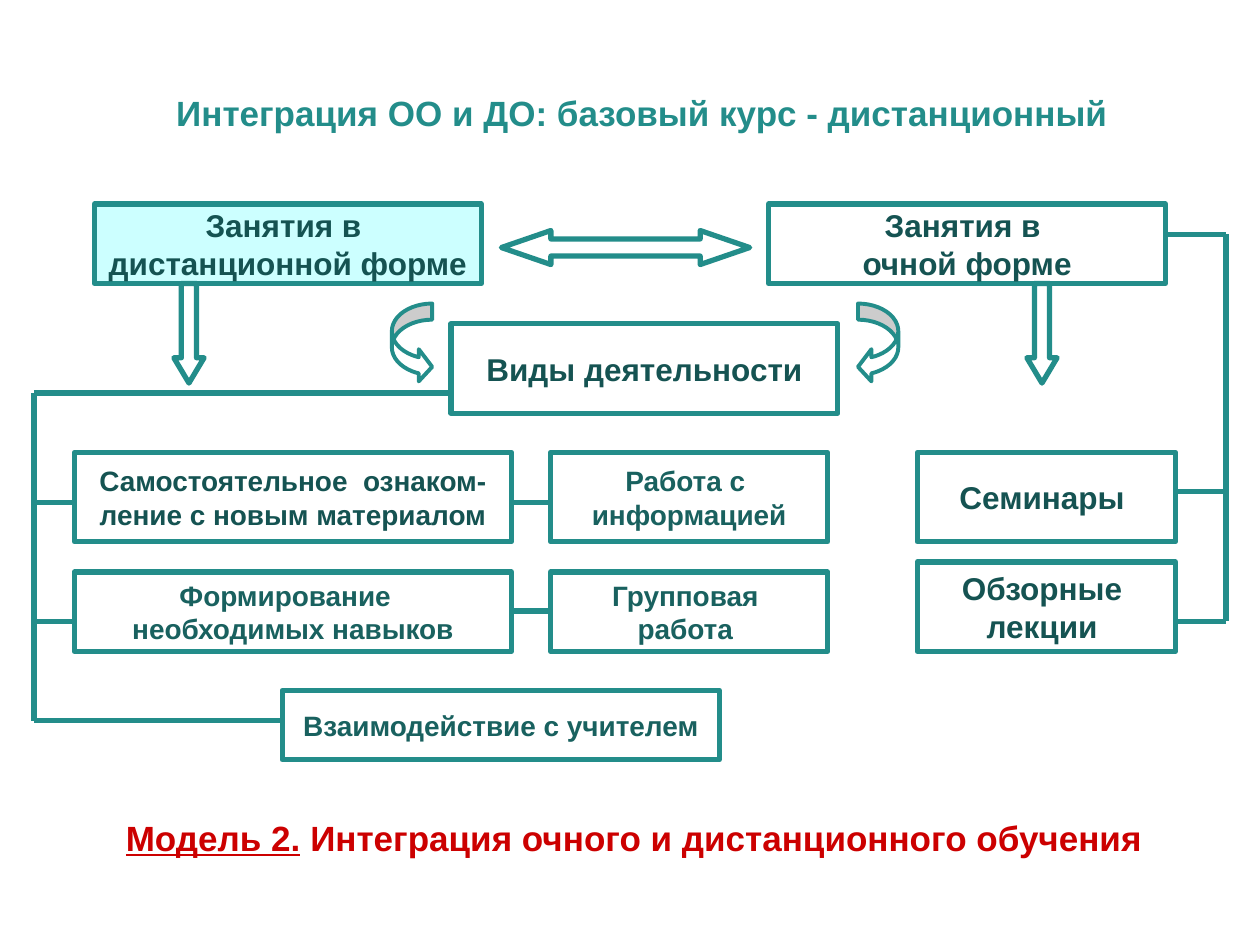
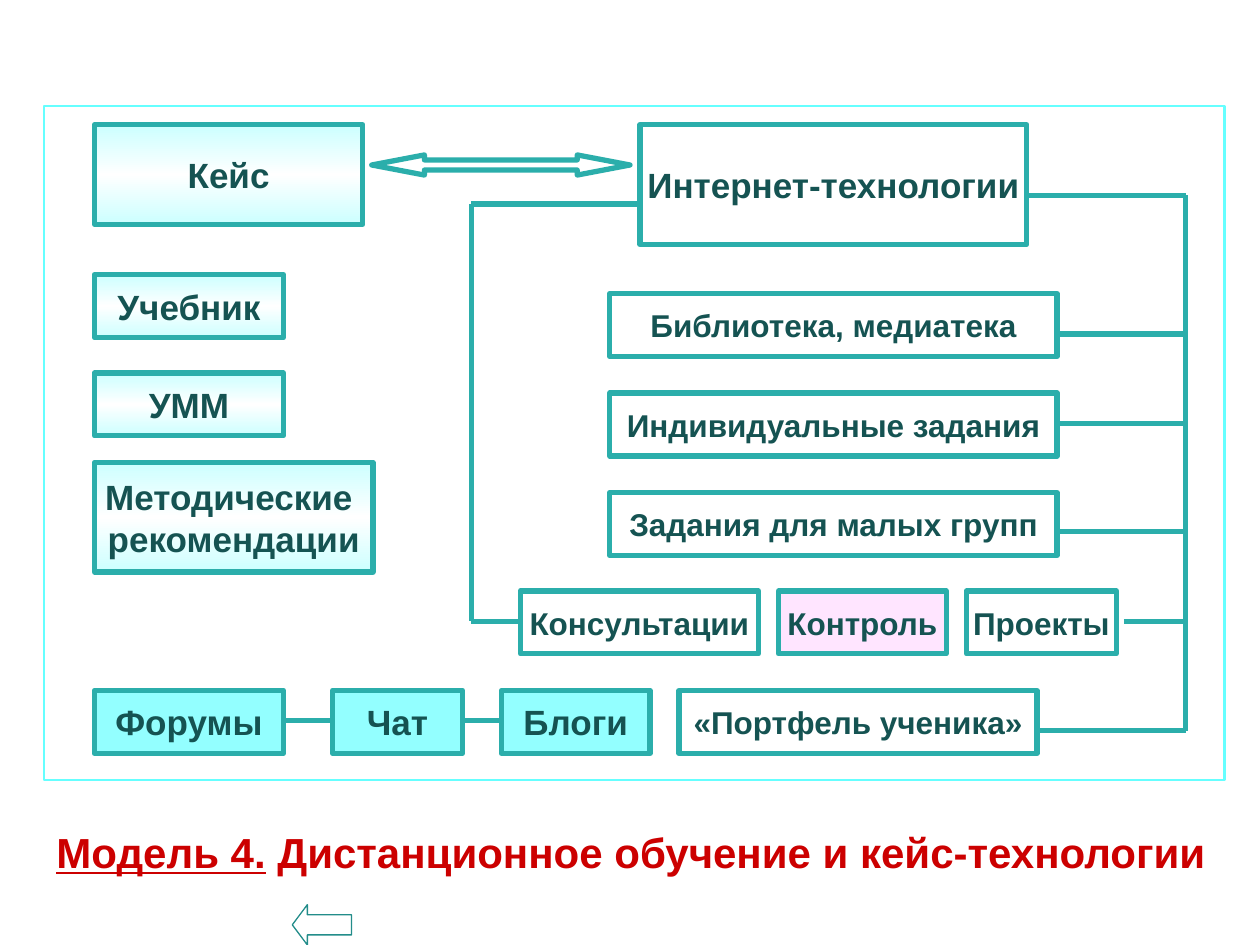
from copy import deepcopy
from pptx import Presentation
from pptx.util import Inches, Pt
from pptx.dml.color import RGBColor
from pptx.enum.shapes import MSO_SHAPE as SHAPE, MSO_CONNECTOR as CONN
from pptx.enum.text import PP_ALIGN as ALIGN, MSO_ANCHOR as ANCHOR
from pptx.oxml.ns import qn
from lxml import etree

rgb = RGBColor.from_string
FONT = "Arial"
TEAL, AQUA = "238D8A", "2BAEAB"
DARK, MID, RED = "155352", "19615F", "CC0000"
WHITE, PALE, CYAN, PINK = "FFFFFF", "CCFFFF", "93FFFF", "FFE5FF"
GRADIENT = [(0, PALE), (0.5, WHITE), (1, PALE)]


def add_box(s, at, line, fill=WHITE, text="", size=18, color=DARK,
            kind=SHAPE.RECTANGLE, adj=(), width=3):
    sp = s.shapes.add_shape(kind, *[Inches(v) for v in at])
    sp.shadow.inherit = False
    sp.line.color.rgb = rgb(line)
    sp.line.width = Pt(width)
    for i, value in enumerate(adj):
        sp.adjustments[i] = value
    if fill is None:
        sp.fill.background()
    elif fill is GRADIENT:
        sp.fill.gradient()
        sp.fill.gradient_angle = 90
        gs_list = sp._element.spPr.find(qn("a:gradFill")).find(qn("a:gsLst"))
        gs_list.append(deepcopy(gs_list[0]))
        for stop, (position, shade) in zip(sp.fill.gradient_stops, GRADIENT):
            stop.position = position
            stop.color.rgb = rgb(shade)
    else:
        sp.fill.solid()
        sp.fill.fore_color.rgb = rgb(fill)
    if text:
        tf = sp.text_frame
        tf.text = text
        tf.word_wrap = False
        tf.vertical_anchor = ANCHOR.MIDDLE
        for p in tf.paragraphs:
            p.alignment = ALIGN.CENTER
            for r in p.runs:
                r.font.name, r.font.size, r.font.bold = FONT, Pt(size), True
                r.font.color.rgb = rgb(color)
    return sp


def add_links(s, links, color):
    for link in links:
        cn = s.shapes.add_connector(CONN.STRAIGHT, *[Inches(v) for v in link])
        cn.line.color.rgb = rgb(color)
        cn.line.width = Pt(3)
        etree.SubElement(cn._element.spPr, qn("a:effectLst"))


prs = Presentation()
prs.slide_width, prs.slide_height = Inches(10), Inches(7.5)
blank = prs.slide_layouts[6]

s1 = prs.slides.add_slide(blank)
left, right = 0.27, 9.73
add_links(s1, [
    (right, 1.86, right, 4.93),
    *[(right, y, 9.25, y) for y in (1.86, 3.9, 4.93)],
    (left, 3.12, left, 5.72),
    (left, 3.12, 3.58, 3.12),
    (left, 5.72, 2.24, 5.72),
    *[(left, y, 0.59, y) for y in (3.99, 4.93)],
    *[(4.06, y, 4.37, y) for y in (3.99, 4.85)],
], TEAL)

for at, fill, text, size, color in [
    ((0.75, 1.62, 3.07, 0.63), PALE, "Занятия в \nдистанционной форме", 18, DARK),
    ((6.1, 1.62, 3.15, 0.63), WHITE, "Занятия в \nочной форме", 18, DARK),
    ((3.58, 2.57, 3.07, 0.71), WHITE, "Виды деятельности", 18, DARK),
    ((0.59, 3.59, 3.47, 0.71), WHITE,
     "Самостоятельное  ознаком-\nление с новым материалом", 16, DARK),
    ((0.59, 4.54, 3.47, 0.63), WHITE, "Формирование  \nнеобходимых навыков", 16, MID),
    ((4.37, 3.59, 2.2, 0.71), WHITE, "Работа с \nинформацией", 16, MID),
    ((4.37, 4.54, 2.2, 0.63), WHITE, "Групповая \nработа ", 16, MID),
    ((2.24, 5.48, 3.47, 0.55), WHITE, "Взаимодействие с учителем", 16, MID),
    ((7.28, 3.59, 2.05, 0.71), WHITE, "Семинары ", 18, DARK),
    ((7.28, 4.46, 2.05, 0.71), WHITE, "Обзорные \nлекции ", 18, DARK),
]:
    add_box(s1, at, TEAL, fill, text, size, color)

add_box(s1, (3.98, 1.83, 1.97, 0.27), TEAL, kind=SHAPE.LEFT_RIGHT_ARROW, adj=(0.5, 1.454))
for x in (1.38, 8.15):
    add_box(s1, (x, 2.25, 0.24, 0.79), TEAL, kind=SHAPE.DOWN_ARROW, adj=(0.5, 0.835))
for x, flip in ((3.11, "0"), (6.81, "1")):
    sp = add_box(s1, (x, 2.41, 0.32, 0.63), TEAL, kind=SHAPE.CURVED_RIGHT_ARROW,
                 adj=(0.399, 0.798, 0.333), width=2.25)
    sp._element.spPr.xfrm.set("flipH", flip)

s2 = prs.slides.add_slide(blank)
left, right = 3.74, 9.41
add_links(s2, [
    (left, 1.62, left, 4.93),
    (left, 1.62, 5.31, 1.62),
    (left, 4.93, 4.29, 4.93),
    (right, 1.55, right, 5.8),
    *[(x, y, right, y) for x, y in ((7.84, 1.55), (8.39, 2.65), (8.39, 3.36),
                                    (8.39, 4.22), (8.92, 4.93), (8.23, 5.8))],
    *[(x, 5.72, x + 0.55, 5.72) for x in (2.09, 3.43)],
], AQUA)

for at, fill, text, size in [
    ((0.75, 0.99, 2.13, 0.79), GRADIENT, "Кейс", 20),
    ((0.75, 2.18, 1.5, 0.5), GRADIENT, "Учебник", 20),
    ((0.75, 2.96, 1.5, 0.5), GRADIENT, "УММ", 20),
    ((0.75, 3.67, 2.21, 0.87), GRADIENT, "Методические \nрекомендации", 20),
    ((5.08, 0.99, 3.07, 0.95), WHITE, "Интернет-технологии", 20),
    ((4.84, 2.33, 3.55, 0.5), None, "Библиотека, медиатека", 18),
    ((4.84, 3.12, 3.55, 0.5), None, "Индивидуальные задания", 18),
    ((4.84, 3.91, 3.55, 0.5), None, "Задания для малых групп", 18),
    ((4.13, 4.69, 1.89, 0.5), WHITE, "Консультации", 18),
    ((6.18, 4.69, 1.33, 0.5), PINK, "Контроль", 18),
    ((7.67, 4.69, 1.19, 0.5), None, "Проекты", 18),
    ((0.75, 5.48, 1.5, 0.5), CYAN, "Форумы", 20),
    ((2.64, 5.48, 1.03, 0.5), CYAN, "Чат", 20),
    ((3.98, 5.48, 1.18, 0.5), CYAN, "Блоги", 20),
    ((5.39, 5.48, 2.84, 0.5), None, "«Портфель ученика»", 18),
]:
    add_box(s2, at, AQUA, fill, text, size)

add_box(s2, (2.95, 1.23, 2.05, 0.16), AQUA, kind=SHAPE.LEFT_RIGHT_ARROW, adj=(0.5, 2.62))
add_box(s2, (0.35, 0.84, 9.37, 5.35), "66FFFF", None, width=1.5)
add_box(s2, (2.32, 7.18, 0.47, 0.32), TEAL, kind=SHAPE.LEFT_ARROW, adj=(0.5, 0.374), width=0.75)

for s, at, size, color, wrap, label, text in [
    (s1, (1.3, 0.68, 8.19, 0.43), 20, TEAL, True, "",
     "Интеграция ОО и ДО: базовый курс - дистанционный"),
    (s1, (0.9, 6.43, 8.35, 0.43), 20, RED, False, "Модель 2.",
     " Интеграция очного и дистанционного обучения"),
    (s2, (0.35, 6.51, 9.5, 0.5), 24, RED, False, "Модель 4.",
     " Дистанционное обучение и кейс-технологии"),
]:
    tf = s.shapes.add_textbox(*[Inches(v) for v in at]).text_frame
    tf.word_wrap = wrap
    tf.vertical_anchor = ANCHOR.MIDDLE
    p = tf.paragraphs[0]
    for part in filter(None, (label, text)):
        r = p.add_run()
        r.text = part
        r.font.name, r.font.size, r.font.bold = FONT, Pt(size), True
        r.font.underline = part == label
        r.font.color.rgb = rgb(color)

prs.save("out.pptx")
